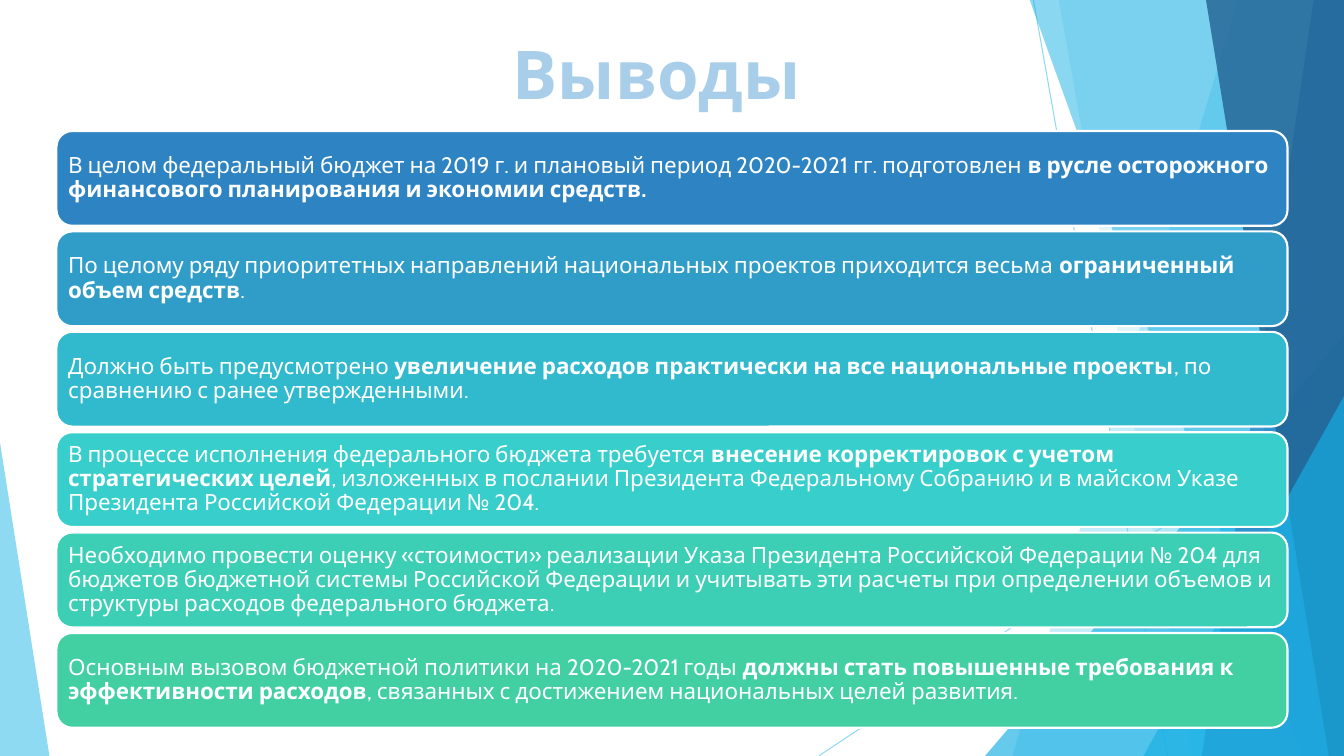
"""Build the conclusions slide: six coloured bars over a faceted background."""
import pptx
import pptx.dml.color
import pptx.enum.shapes
import pptx.enum.text
import pptx.oxml.ns
import pptx.util
from lxml import etree

inch = pptx.util.Inches
point = pptx.util.Pt
qname = pptx.oxml.ns.qn
shape_type = pptx.enum.shapes.MSO_SHAPE
anchor = pptx.enum.text.MSO_ANCHOR
WIDTH, HEIGHT = 13.33, 7.5
TOP = -0.01


def paint(fill, colour):
    """Make a fill solid in a hex colour."""
    fill.solid()
    fill.fore_color.rgb = pptx.dml.color.RGBColor.from_string(colour)


def fade(shape, opacity):
    """Give the first colour of a shape an opacity in percent."""
    colour = shape.element.spPr.find(".//" + qname("a:srgbClr"))
    etree.SubElement(colour, qname("a:alpha")).set("val", str(opacity * 1000))


presentation = pptx.Presentation()
presentation.slide_width = inch(WIDTH)
presentation.slide_height = inch(HEIGHT)
slide = presentation.slides.add_slide(presentation.slide_layouts[6])
shapes = slide.shapes

rays = [(10.25, 0, 11.58, HEIGHT), (WIDTH, 4.03, 8.12, HEIGHT)]
for ray in rays:
    connector = shapes.add_connector(
        pptx.enum.shapes.MSO_CONNECTOR.STRAIGHT, *map(inch, ray))
    paint(connector.line.fill, "5FCBEF")
    connector.line.width = point(0.75)
    fade(connector, 70)
    etree.SubElement(connector.element.spPr, qname("a:effectLst"))

# Each band runs from its top-left x to its bottom-left x; each triangle has left, top, width, apex.
facets = [
    ("band", (12.28, 10.04), "5FCBEF", 36),
    ("band", (10.5, 11.83), "5FCBEF", 20),
    ("triangle", (9.77, 3.33, 3.56, 1), "17B0E4", 66),
    ("band", (10.21, 12.91), "17B0E4", 50),
    ("band", (13.03, 11.92), "2E83C3", 70),
    ("band", (11.96, 13.18), "226292", 80),
    ("triangle", (11.34, 3.93, 1.99, 1), "17B0E4", 66),
    ("triangle", (0, 4.39, 0.49, 0), "5FCBEF", 70),
]
for kind, measures, colour, opacity in facets:
    if kind == "band":
        top_x, bottom_x = measures
        builder = shapes.build_freeform(inch(top_x), inch(TOP))
        corners = [(WIDTH, TOP), (WIDTH, HEIGHT), (bottom_x, HEIGHT)]
        builder.add_line_segments([(inch(x), inch(y)) for x, y in corners], close=True)
        facet = builder.convert_to_shape()
    else:
        left, top, width, apex = measures
        facet = shapes.add_shape(
            shape_type.ISOSCELES_TRIANGLE,
            *map(inch, (left, top, width, HEIGHT - top)))
        facet.adjustments[0] = apex
    facet.shadow.inherit = False
    facet.line.fill.background()
    paint(facet.fill, colour)
    fade(facet, opacity)

title = shapes.add_textbox(*map(inch, (0.9, 0.27, 11.38, 0.91)))
title.text_frame.word_wrap = True
paragraph = title.text_frame.paragraphs[0]
paragraph.alignment = pptx.enum.text.PP_ALIGN.CENTER
run = paragraph.add_run()
run.text = "Выводы "
title_format = {"name": "Cabin", "size": point(48), "bold": True}
for name, value in title_format.items():
    setattr(run.font, name, value)
paint(run.font.fill, "A8CEEA")

BAR_LEFT, BAR_TOP, BAR_WIDTH, BAR_HEIGHT = 0.56, 1.3, 12.21, 0.94
LAST_BAR_TOP = 6.28
conclusions = [
    ("2E83C3", ["В целом федеральный бюджет на 2019 г. и плановый период 2020-2021 гг. подготовлен ",
                "в русле осторожного финансового планирования и экономии средств."]),
    ("309DC8", ["По целому ряду приоритетных направлений национальных проектов приходится весьма ",
                "ограниченный объем средств", "."]),
    ("31B9CD", ["Должно быть предусмотрено ",
                "увеличение расходов практически на все национальные проекты",
                ", по сравнению с ранее утвержденными."]),
    ("37CECB", ["В процессе исполнения федерального бюджета требуется ",
                "внесение корректировок с учетом стратегических целей",
                ", изложенных в послании Президента Федеральному Собранию и в майском Указе "
                "Президента Российской Федерации № 204."]),
    ("3CCFB6", ["Необходимо провести оценку «стоимости» реализации Указа Президента Российской "
                "Федерации № 204 для бюджетов бюджетной системы Российской Федерации и учитывать "
                "эти расчеты при определении объемов и структуры расходов федерального бюджета."]),
    ("42D0A2", ["Основным вызовом бюджетной политики на 2020-2021 годы ",
                "должны стать повышенные требования к эффективности расходов",
                ", связанных с достижением национальных целей развития."]),
]
frame_format = {"word_wrap": True, "vertical_anchor": anchor.MIDDLE}
for side in ("left", "top", "right", "bottom"):
    frame_format["margin_" + side] = inch(0.07)
pitch = (LAST_BAR_TOP - BAR_TOP) / (len(conclusions) - 1)

for row, (colour, phrases) in enumerate(conclusions):
    bar = shapes.add_shape(
        shape_type.ROUNDED_RECTANGLE,
        *map(inch, (BAR_LEFT, BAR_TOP + row * pitch, BAR_WIDTH, BAR_HEIGHT)))
    bar.shadow.inherit = False
    paint(bar.fill, colour)
    paint(bar.line.fill, "FFFFFF")
    bar.line.width = point(1.5)
    for name, value in frame_format.items():
        setattr(bar.text_frame, name, value)
    paragraph = bar.text_frame.paragraphs[0]
    paragraph.alignment = pptx.enum.text.PP_ALIGN.LEFT
    paragraph.line_spacing = 0.9
    for order, phrase in enumerate(phrases):
        run = paragraph.add_run()
        run.text = phrase
        run_format = {"name": "Cabin", "size": point(16), "bold": order == 1}
        for name, value in run_format.items():
            setattr(run.font, name, value)
        paint(run.font.fill, "FFFFFF")

presentation.save("out.pptx")
